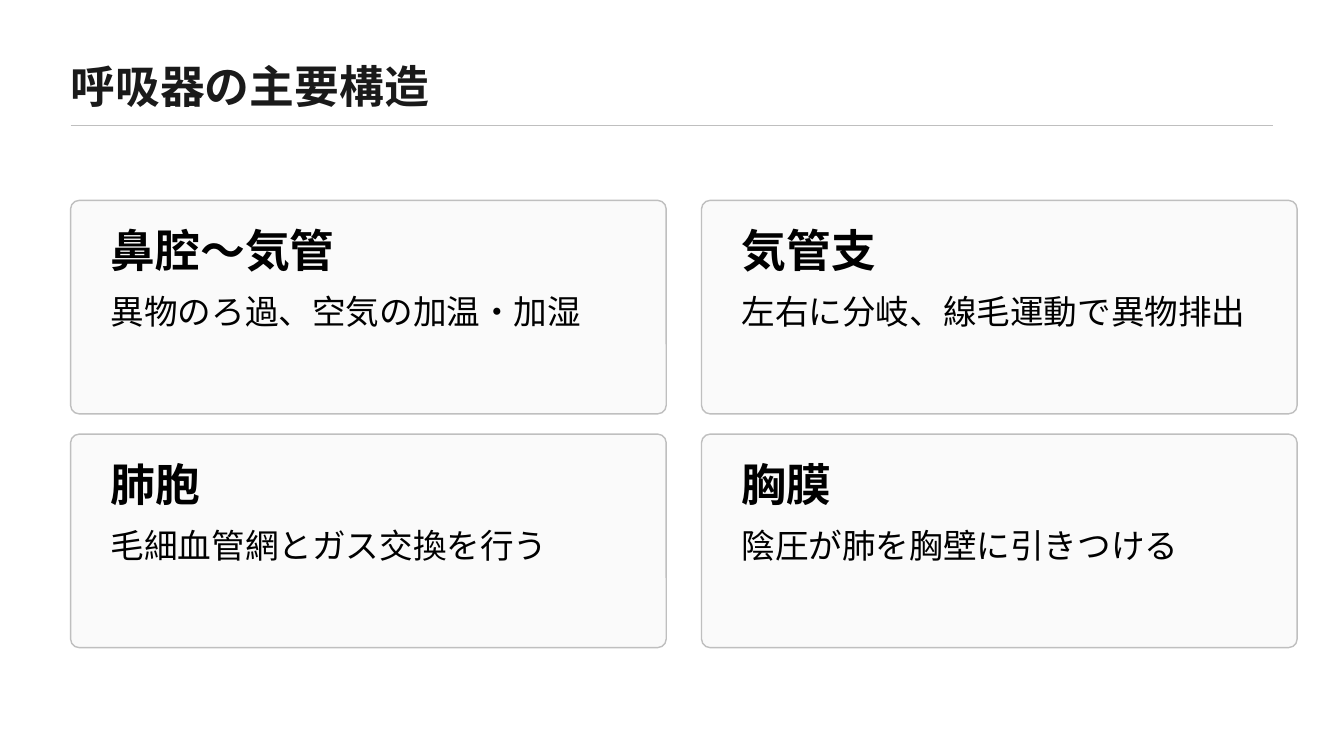
from lxml.etree import SubElement
from pptx import Presentation
from pptx.dml.color import RGBColor
from pptx.enum.shapes import MSO_CONNECTOR, MSO_SHAPE
from pptx.enum.text import MSO_ANCHOR
from pptx.oxml.ns import qn
from pptx.util import Cm, Pt

TITLE = "呼吸器の主要構造"
CARDS = [
    ("鼻腔〜気管", "異物のろ過、空気の加温・加湿"),
    ("気管支", "左右に分岐、線毛運動で異物排出"),
    ("肺胞", "毛細血管網とガス交換を行う"),
    ("胸膜", "陰圧が肺を胸壁に引きつける"),
]
COLORS = {"title": "1A1A1A", "text": "000000", "line": "BFBFBF", "card": "FAFAFA"}
FONT = "Arial"

# Lengths in centimetres
SLIDE_W, SLIDE_H = 33.87, 19.05
LEFT, CONTENT_W = 1.78, 30.3
TITLE_TOP, TITLE_H = 1.14, 2.03
COLUMNS = 2
GRID_TOP = 5.05
CARD_W, CARD_H = 15.01, 5.38
GAP_X, GAP_Y = 0.89, 0.51
PAD_X, TEXT_W = 0.76, 13.41
HEAD_DY, HEAD_H = 0.51, 1.47
BODY_DY, BODY_H = 2.16, 2.41


def rgb(name):
    return RGBColor.from_string(COLORS[name])


def add_text(slide, text, x, y, w, h, size, color="text", bold=False,
             anchor=MSO_ANCHOR.TOP):
    tf = slide.shapes.add_textbox(Cm(x), Cm(y), Cm(w), Cm(h)).text_frame
    tf.word_wrap = True
    tf.vertical_anchor = anchor
    p = tf.paragraphs[0]
    p.text = text
    p.font.name = FONT
    p.font.size = Pt(size)
    p.font.bold = bold
    p.font.color.rgb = rgb(color)
    return tf


def set_outline(line):
    line.color.rgb = rgb("line")
    line.width = Pt(1)


def add_title(slide):
    tf = add_text(slide, TITLE, LEFT, TITLE_TOP, CONTENT_W, TITLE_H, 32,
                  "title", True, MSO_ANCHOR.MIDDLE)
    tf.margin_left = tf.margin_right = tf.margin_top = tf.margin_bottom = 0
    y = Cm(TITLE_TOP + TITLE_H)
    rule = slide.shapes.add_connector(
        MSO_CONNECTOR.STRAIGHT, Cm(LEFT), y, Cm(LEFT + CONTENT_W), y)
    set_outline(rule.line)
    SubElement(rule._element.spPr, qn("a:effectLst"))


def add_card(slide, x, y, heading, body):
    sp = slide.shapes.add_shape(
        MSO_SHAPE.ROUNDED_RECTANGLE, Cm(x), Cm(y), Cm(CARD_W), Cm(CARD_H))
    sp.adjustments[0] = 0.04
    sp.shadow.inherit = False
    sp.fill.solid()
    sp.fill.fore_color.rgb = rgb("card")
    set_outline(sp.line)
    add_text(slide, heading, x + PAD_X, y + HEAD_DY, TEXT_W, HEAD_H, 32,
             bold=True, anchor=MSO_ANCHOR.MIDDLE)
    add_text(slide, body, x + PAD_X, y + BODY_DY, TEXT_W, BODY_H, 24)


def main():
    prs = Presentation()
    prs.slide_width, prs.slide_height = Cm(SLIDE_W), Cm(SLIDE_H)
    slide = prs.slides.add_slide(prs.slide_layouts[6])
    add_title(slide)
    for i, (heading, body) in enumerate(CARDS):
        row, col = divmod(i, COLUMNS)
        add_card(slide, LEFT + col * (CARD_W + GAP_X),
                 GRID_TOP + row * (CARD_H + GAP_Y), heading, body)
    prs.save("out.pptx")


if __name__ == "__main__":
    main()
